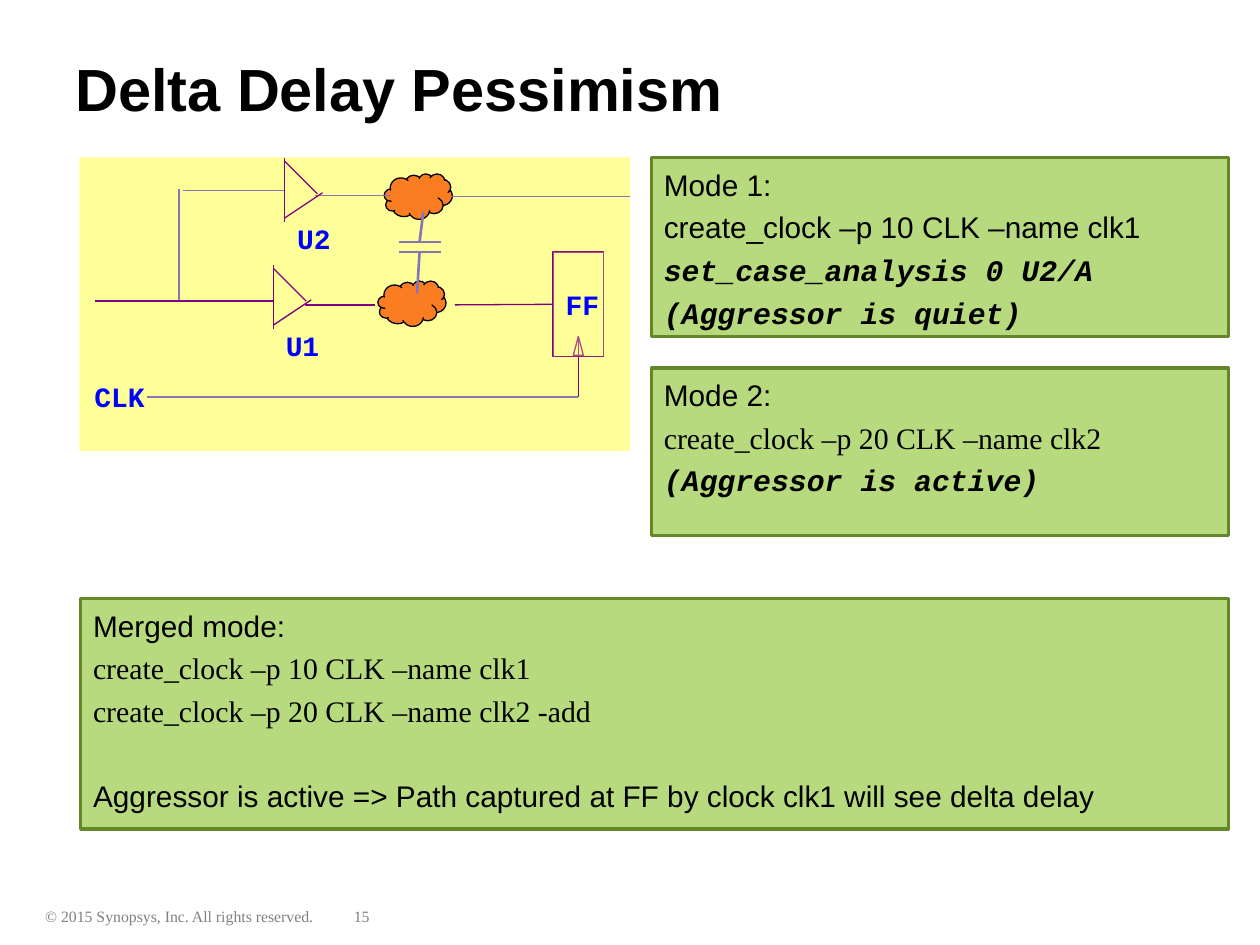
from lxml.etree import SubElement
from pptx import Presentation
from pptx.dml.color import RGBColor
from pptx.enum.shapes import MSO_CONNECTOR, MSO_SHAPE
from pptx.enum.text import MSO_ANCHOR, MSO_AUTO_SIZE, PP_ALIGN
from pptx.oxml.ns import qn
from pptx.util import Inches, Pt

COLORS = {
    "black": "000000",
    "grey": "808080",
    "blue": "0000FF",
    "yellow": "FFFF99",
    "green": "B8DA7E",
    "dark_green": "648827",
    "orange": "FA7D21",
    "purple": "800080",
    "lavender": "8576B7",
}
SANS, SERIF, MONO = "Arial", "Times New Roman", "Courier New"
LABEL = {"size": 16, "font": MONO, "color": "blue", "bold": True}
FOOTER = {"size": 9, "font": SERIF, "color": "grey"}
EMPHASIS = {"font": MONO, "bold": True, "italic": True}


def rgb(name):
    return RGBColor.from_string(COLORS[name])


def write(paragraph, text, size=17, font=SANS, color="black", bold=False,
          italic=False, space_before=0, hanging=0):
    properties = paragraph._p.get_or_add_pPr()
    properties.set("marL", str(Inches(hanging)))
    properties.set("indent", str(-Inches(hanging)))
    paragraph.alignment = PP_ALIGN.LEFT
    paragraph.space_before = Pt(space_before)
    run = paragraph.add_run()
    run.text = text
    run.font.size = Pt(size)
    run.font.name = font
    run.font.bold = bold
    run.font.italic = italic
    run.font.color.rgb = rgb(color)


def add_label(slide, text, left, top, width, height,
              anchor=MSO_ANCHOR.TOP, grow=True, **text_format):
    box = slide.shapes.add_textbox(
        Inches(left), Inches(top), Inches(width), Inches(height))
    frame = box.text_frame
    frame.word_wrap = True
    frame.vertical_anchor = anchor
    if grow:
        frame.auto_size = MSO_AUTO_SIZE.SHAPE_TO_FIT_TEXT
    write(frame.paragraphs[0], text, **text_format)


def add_block(slide, kind, left, top, width, height,
              fill=None, line=None, line_width=0.75):
    shape = slide.shapes.add_shape(
        kind, Inches(left), Inches(top), Inches(width), Inches(height))
    shape.shadow.inherit = False
    if fill:
        shape.fill.solid()
        shape.fill.fore_color.rgb = rgb(fill)
    else:
        shape.fill.background()
    if line:
        shape.line.color.rgb = rgb(line)
        shape.line.width = Pt(line_width)
    else:
        shape.line.fill.background()
    return shape


def add_wire(slide, start_x, start_y, end_x, end_y, color="purple", width=0.75):
    wire = slide.shapes.add_connector(
        MSO_CONNECTOR.STRAIGHT, Inches(start_x), Inches(start_y),
        Inches(end_x), Inches(end_y))
    wire.line.color.rgb = rgb(color)
    wire.line.width = Pt(width)
    SubElement(wire._element.spPr, qn("a:effectLst"))
    return wire


def add_mode_box(slide, left, top, width, height, lines):
    box = add_block(slide, MSO_SHAPE.RECTANGLE, left, top, width, height,
                    "green", "dark_green", 2)
    frame = box.text_frame
    frame.word_wrap = True
    frame.vertical_anchor = MSO_ANCHOR.TOP
    frame.margin_top = Inches(0.07)
    for index, (text, text_format) in enumerate(lines):
        paragraph = frame.add_paragraph() if index else frame.paragraphs[0]
        spacing = {"space_before": 4 if index else 0, "hanging": 0.38}
        write(paragraph, text, **{**spacing, **text_format})


def add_buffer(slide, name, left, top):
    add_wire(slide, left, top, left, top + 0.51)
    add_wire(slide, left, top + 0.03, left + 0.26, top + 0.29)
    add_wire(slide, left + 0.3, top + 0.28, left, top + 0.48)
    add_label(slide, name, left, top + 0.46, 0.53, 0.37, **LABEL)


def add_flip_flop(slide):
    outline = add_block(slide, MSO_SHAPE.RECTANGLE, 4.39, 2, 0.4, 0.83, line="purple")
    add_block(slide, MSO_SHAPE.ISOSCELES_TRIANGLE, 4.55, 2.67, 0.08, 0.15, line="purple")
    add_wire(slide, 4.59, 2.69, 4.59, 3.15)
    data_wire = add_wire(slide, 3.61, 2.42, 4.39, 2.42)
    data_wire.end_connect(outline, 1)

    face = add_block(slide, MSO_SHAPE.RECTANGLE, 4.39, 2, 0.41, 0.83, "yellow")
    color = face._element.spPr.find(qn("a:solidFill"))[0]
    SubElement(color, qn("a:alpha"), val="31000")
    face.text_frame.word_wrap = False
    face.text_frame.vertical_anchor = MSO_ANCHOR.MIDDLE
    write(face.text_frame.paragraphs[0], "FF", **LABEL)


def add_capacitor(slide):
    for wire in (
        (3.36, 1.68, 3.33, 1.92),
        (3.33, 2, 3.31, 2.33),
        (3.5, 1.92, 3.17, 1.92),
        (3.5, 2, 3.17, 2),
    ):
        add_wire(slide, *wire, color="lavender", width=1.5)


def add_circuit(slide):
    add_block(slide, MSO_SHAPE.RECTANGLE, 0.63, 1.25, 4.37, 2.33, "yellow")
    add_wire(slide, 0.75, 2.39, 2.17, 2.39)
    add_wire(slide, 2.42, 2.42, 2.98, 2.42)
    add_flip_flop(slide)
    for left, top in ((3, 2.23), (3.05, 1.38)):
        add_block(slide, MSO_SHAPE.CLOUD, left, top, 0.54, 0.36, "orange", "black")
    add_capacitor(slide)
    for wire in (
        (1.42, 2.38, 1.42, 1.5),
        (1.45, 1.51, 2.25, 1.51),
        (2.5, 1.55, 3.1, 1.55),
        (3.58, 1.56, 5, 1.56),
        (1.17, 3.15, 4.59, 3.15),
    ):
        add_wire(slide, *wire, color="lavender")
    add_buffer(slide, "U1", 2.17, 2.1)
    add_buffer(slide, "U2", 2.26, 1.25)
    add_label(slide, "CLK", 0.65, 2.96, 0.68, 0.37, **LABEL)


def main():
    presentation = Presentation()
    presentation.slide_width = Inches(10)
    presentation.slide_height = Inches(7.5)
    slide = presentation.slides.add_slide(presentation.slide_layouts[6])

    add_label(slide, "© 2015 Synopsys, Inc. All rights reserved.",
              0.26, 7.15, 3.08, 0.25, **FOOTER)
    add_label(slide, "15", 2.71, 7.15, 0.7, 0.25, **FOOTER)
    add_label(slide, "Delta Delay Pessimism", 0.5, 0.07, 9.5, 1.25,
              anchor=MSO_ANCHOR.MIDDLE, grow=False, size=34, bold=True)
    add_circuit(slide)

    add_mode_box(slide, 5.17, 1.25, 4.58, 1.42, [
        ("Mode 1:", {}),
        ("create_clock –p 10 CLK –name clk1", {}),
        ("set_case_analysis 0 U2/A", EMPHASIS),
        ("(Aggressor is quiet)", EMPHASIS),
    ])
    add_mode_box(slide, 5.17, 2.92, 4.58, 1.33, [
        ("Mode 2:", {}),
        ("create_clock –p 20 CLK –name clk2", {"font": SERIF}),
        ("(Aggressor is active)", EMPHASIS),
    ])
    add_mode_box(slide, 0.64, 4.75, 9.11, 1.83, [
        ("Merged mode:", {}),
        ("create_clock –p 10 CLK –name clk1", {"font": SERIF}),
        ("create_clock –p 20 CLK –name clk2 -add", {"font": SERIF}),
        ("Aggressor is active => Path captured at FF by clock clk1 "
         "will see delta delay", {"space_before": 28}),
    ])
    presentation.save("out.pptx")


if __name__ == "__main__":
    main()
